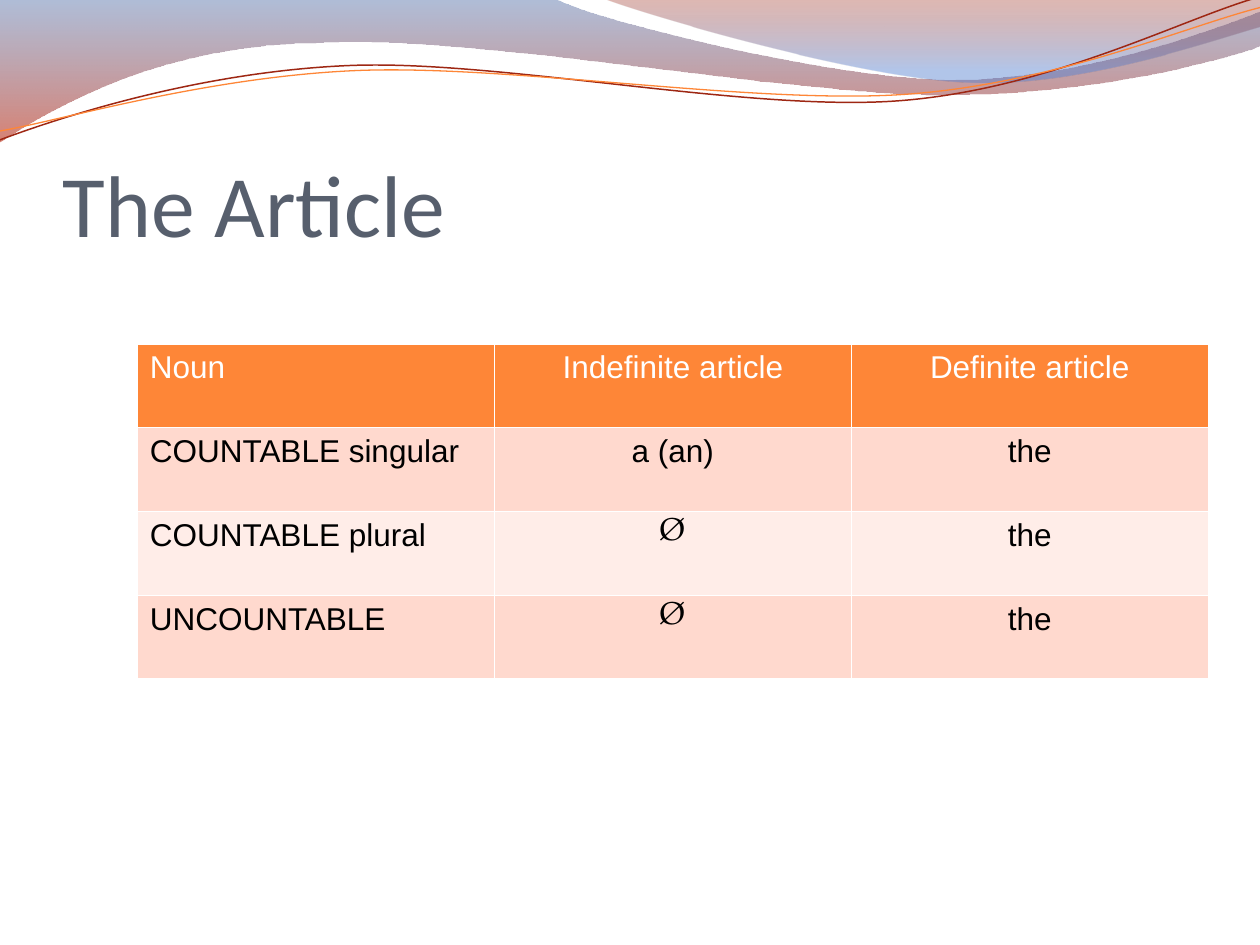
from math import cos, radians, sin

from lxml.etree import SubElement
from pptx import Presentation
from pptx.dml.color import RGBColor
from pptx.enum.text import MSO_ANCHOR, PP_ALIGN
from pptx.oxml.ns import qn
from pptx.util import Inches, Pt


def rgb(value):
    return RGBColor.from_string(value)


def turn(point, angle, center=(4.99, 0.58)):
    dx, dy = point[0] - center[0], point[1] - center[1]
    c, s = cos(radians(angle)), sin(radians(angle))
    return center[0] + dx * c - dy * s, center[1] + dx * s + dy * c


class SlideBuilder:
    FONT = "Arial"
    TITLE_FONT = "Calibri"
    SYMBOL_FONT = "TeX Gyre Pagella"
    TITLE_COLOR = "575F6D"
    ACCENT = "FE8637"
    BANDS = ("FFD9CE", "FFEDE8")
    WHITE = "FFFFFF"
    BLACK = "000000"
    TILT = 2.7

    def __init__(self, prs):
        self.s = prs.slides.add_slide(prs.slide_layouts[6])

    def outline(self, start, segments, close):
        points = [start] + [point for segment in segments for point in segment]
        emu = [(Inches(x), Inches(y)) for x, y in points]
        builder = self.s.shapes.build_freeform(*emu[0], scale=1.0)
        builder.add_line_segments(emu[1:], close=close)
        sp = builder.convert_to_shape()
        sp.shadow.inherit = False
        self.bend(sp, segments)
        return sp

    def bend(self, sp, segments):
        geometry = next(sp._element.iter(qn("a:path")))
        lines = iter(geometry.findall(qn("a:lnTo")))
        for segment in segments:
            group = [next(lines) for _ in segment]
            if len(group) == 3:
                curve = SubElement(geometry, qn("a:cubicBezTo"))
                group[0].addprevious(curve)
                for line in group:
                    curve.append(line[0])
                    geometry.remove(line)

    def wave(self, start, segments, stops):
        sp = self.outline(start, segments, True)
        sp.line.fill.background()
        sp.fill.gradient()
        sp.fill.gradient_angle = 270
        nodes = sp._element.spPr.iter(qn("a:gs"))
        for stop, node, (position, color, opacity) in zip(sp.fill.gradient_stops, nodes, stops):
            stop.position = position
            stop.color.rgb = rgb(color)
            SubElement(node[0], qn("a:alpha"), val=str(opacity * 1000))

    def ribbon(self, start, segments, color, width):
        level = [[turn(point, self.TILT) for point in segment] for segment in segments]
        sp = self.outline(turn(start, self.TILT), level, False)
        sp.rotation = -self.TILT
        sp.fill.background()
        sp.line.color.rgb = rgb(color)
        sp.line.width = Pt(width)

    def format_run(self, r, font, size, color):
        r.font.name = font
        r.font.size = Pt(size)
        r.font.color.rgb = rgb(color)

    def title(self, text, left, top, width, height):
        box = self.s.shapes.add_textbox(Inches(left), Inches(top), Inches(width), Inches(height))
        tf = box.text_frame
        tf.word_wrap = True
        tf.vertical_anchor = MSO_ANCHOR.BOTTOM
        tf.margin_left = tf.margin_right = tf.margin_bottom = 0
        tf.margin_top = Inches(0.05)
        tf.text = text
        self.format_run(tf.paragraphs[0].runs[0], self.TITLE_FONT, 50, self.TITLE_COLOR)

    def border(self, cell, side):
        ln = SubElement(cell._tc.get_or_add_tcPr(), qn(f"a:ln{side}"), w=str(Pt(1)))
        SubElement(SubElement(ln, qn("a:solidFill")), qn("a:srgbClr"), val=self.WHITE)

    def cell(self, cell, text, row, col):
        cell.text = text
        p = cell.text_frame.paragraphs[0]
        p.alignment = PP_ALIGN.CENTER if col else PP_ALIGN.LEFT
        font = self.SYMBOL_FONT if text == "Ø" else self.FONT
        self.format_run(p.runs[0], font, 18, self.BLACK if row else self.WHITE)
        for side in "LRTB":
            self.border(cell, side)
        cell.fill.solid()
        cell.fill.fore_color.rgb = rgb(self.BANDS[(row - 1) % 2] if row else self.ACCENT)

    def table(self, rows, left, top, width, height):
        frame = self.s.shapes.add_table(
            len(rows), len(rows[0]), Inches(left), Inches(top), Inches(width), Inches(height)
        )
        for i, row in enumerate(rows):
            for j, text in enumerate(row):
                self.cell(frame.table.cell(i, j), text, i, j)


def main():
    prs = Presentation()
    prs.slide_width = Inches(10)
    prs.slide_height = Inches(7.5)
    slide = SlideBuilder(prs)

    slide.wave((0, -0.01), [
        [(4.4, -0.01)],
        [(4.76, 0.17), (6.64, 0.63), (7.58, 0.63)],
        [(8.53, 0.63), (9.58, 0.26), (10, 0.09)],
        [(10.01, 0.36)],
        [(9.83, 0.44), (8.7, 0.76), (7.46, 0.75)],
        [(6.22, 0.75), (3.82, 0.28), (2.57, 0.34)],
        [(1.29, 0.35), (0.46, 0.83), (-0.01, 1.13)],
    ], [(0, "4F6EA8", 45), (1, "B61A00", 55)])
    slide.wave((4.79, -0.01), [
        [(5.09, 0.11), (6.82, 0.62), (7.69, 0.65)],
        [(8.56, 0.69), (9.61, 0.32), (10, 0.21)],
        [(10, 0)],
    ], [(0, "951500", 30), (0.8, "5681D1", 45)])

    slide.ribbon((0, 1.11), [
        [(0.48, 0.93), (1.58, 0.57), (2.77, 0.52)],
        [(3.95, 0.47), (5.93, 0.89), (7.13, 0.8)],
        [(8.33, 0.71), (9.38, 0.15), (9.98, -0.02)],
    ], "9E2713", 0.85)
    slide.ribbon((0, 1.04), [
        [(0.47, 0.96), (1.64, 0.61), (2.83, 0.56)],
        [(4.03, 0.51), (5.97, 0.83), (7.17, 0.75)],
        [(8.36, 0.67), (9.41, 0.21), (10, 0.06)],
    ], slide.ACCENT, 0.75)

    slide.title("The Article", 0.5, 0.77, 9, 1.25)
    slide.table([
        ("Noun", "Indefinite article", "Definite article"),
        ("COUNTABLE singular", "a (an)", "the"),
        ("COUNTABLE plural", "Ø", "the"),
        ("UNCOUNTABLE", "Ø", "the"),
    ], 1.09, 2.73, 8.5, 2.66)

    prs.save("out.pptx")


if __name__ == "__main__":
    main()
